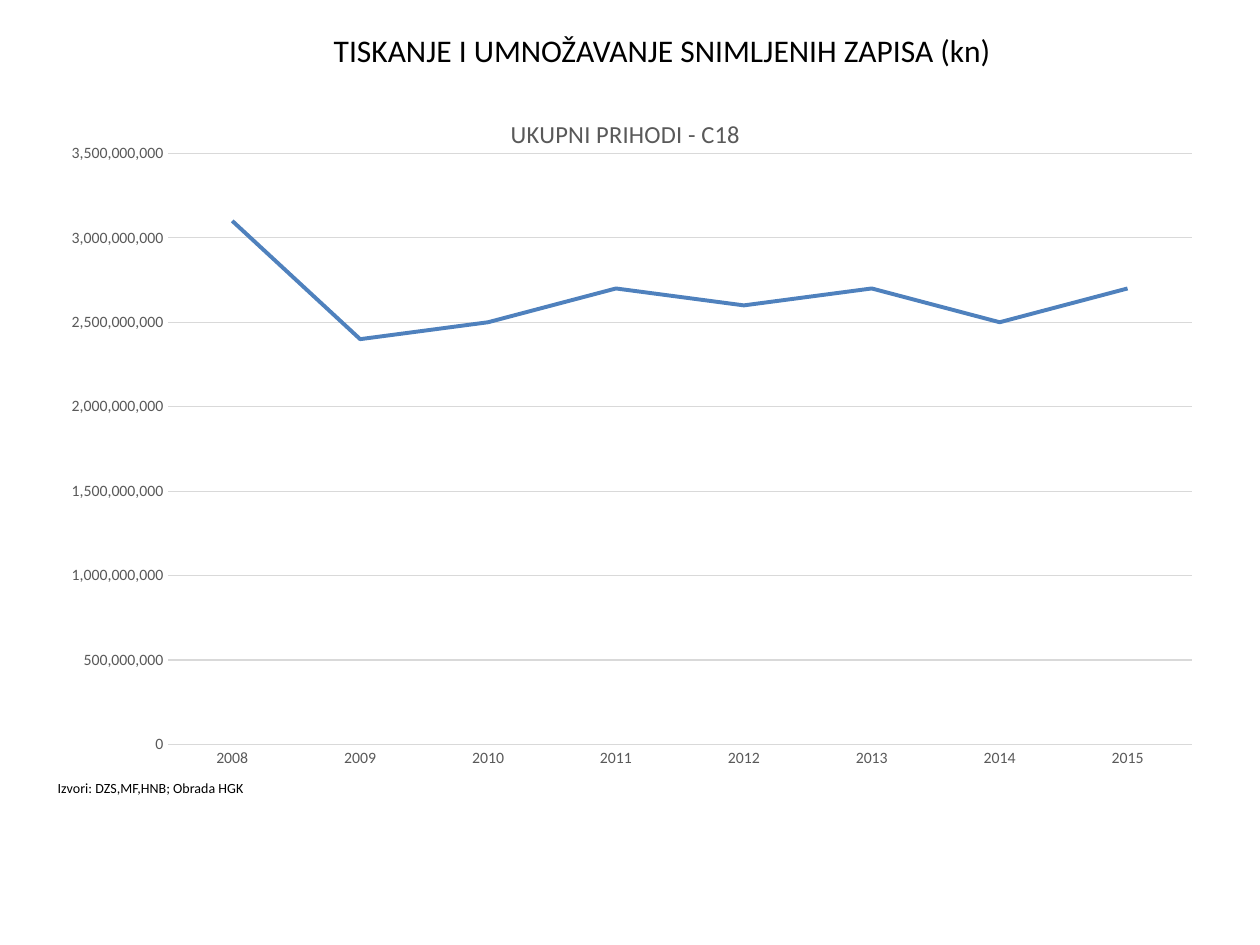
from lxml import etree
from pptx import Presentation
from pptx import util as u
from pptx.chart.data import CategoryChartData
from pptx.dml.color import RGBColor
from pptx.enum import chart as kinds, text
from pptx.oxml.ns import qn

COLOURS = {"ink": "000000", "label": "595959", "grid": "D9D9D9", "income": "4F81BD"}
YEARS = [str(year) for year in range(2008, 2016)]
INCOME_BILLIONS = [3.1, 2.4, 2.5, 2.7, 2.6, 2.7, 2.5, 2.7]


def style_font(font, size, colour, name="Calibri"):
    font.name, font.size, font.bold = name, u.Pt(size), False
    font.color.rgb = RGBColor.from_string(COLOURS[colour])


def write(frame, words, size, colour="ink", align=text.PP_ALIGN.LEFT):
    para = frame.paragraphs[0]
    para.alignment = align
    span = para.add_run()
    span.text = words
    style_font(span.font, size, colour)


class Page:
    """Holds the font style and current slide, and adds elements measured in points."""

    def __init__(self, deck):
        self.page = deck.slides.add_slide(deck.slide_layouts[6])

    def label(self, area, words, size, **style):
        frame = self.page.shapes.add_textbox(*map(u.Pt, area)).text_frame
        frame.word_wrap = True
        frame.auto_size = text.MSO_AUTO_SIZE.SHAPE_TO_FIT_TEXT
        write(frame, words, size, **style)

    def line_chart(self, area, title, years, values, plot):
        data = CategoryChartData(number_format="#,##0")
        data.categories = years
        data.add_series(title, values)
        chart = self.page.shapes.add_chart(
            kinds.XL_CHART_TYPE.LINE, *map(u.Pt, area), data).chart
        style_font(chart.font, 10, "ink")
        chart.has_legend = False
        chart.has_title = True
        write(chart.chart_title.text_frame, title, 14, "label", text.PP_ALIGN.CENTER)
        chart.chart_title.include_in_layout = False
        chart.plots[0].vary_by_categories = False
        series = chart.plots[0].series[0]
        series.smooth = False
        series.marker.style = kinds.XL_MARKER_STYLE.NONE
        self.stroke(series.format.line, "income", 2.25)
        self.axes(chart)
        self.place_plot(chart, plot)

    def axes(self, chart):
        for axis in (chart.category_axis, chart.value_axis):
            axis.major_tick_mark = axis.minor_tick_mark = kinds.XL_TICK_MARK.NONE
            style_font(axis.tick_labels.font, 9, "label")
        self.stroke(chart.category_axis.format.line, "grid", 0.75)
        values = chart.value_axis
        values.minimum_scale, values.maximum_scale = 0, 3_500_000_000
        values.major_unit = 500_000_000
        values.tick_labels.number_format = "#,##0"
        values.tick_labels.number_format_is_linked = False
        values.format.line.fill.background()
        values.has_major_gridlines = True
        self.stroke(values.major_gridlines.format.line, "grid", 0.75)

    def stroke(self, line, colour, width):
        line.color.rgb = RGBColor.from_string(COLOURS[colour])
        line.width = u.Pt(width)

    def place_plot(self, chart, plot):
        area = chart.plots[0]._element.getparent()
        for old in area.findall(qn("c:layout")):
            area.remove(old)
        layout = etree.Element(qn("c:layout"))
        area.insert(0, layout)
        manual = etree.SubElement(layout, qn("c:manualLayout"))
        settings = [("layoutTarget", "inner"), ("xMode", "edge"), ("yMode", "edge"),
                    *zip("xywh", plot)]
        for tag, value in settings:
            etree.SubElement(manual, qn(f"c:{tag}")).set("val", str(value))


def main():
    deck = Presentation()
    deck.slide_width, deck.slide_height = u.Pt(720), u.Pt(540)
    page = Page(deck)
    page.label((25.9, 442, 441, 17), "Izvori: DZS,MF,HNB; Obrada HGK", 8)
    page.label((103, 14, 551, 29), "TISKANJE I UMNOŽAVANJE SNIMLJENIH ZAPISA (kn)", 18,
               align=text.PP_ALIGN.CENTER)
    page.line_chart((25.9, 52.6, 663, 398), "UKUPNI PRIHODI - C18", YEARS,
                    [round(value * 1e9) for value in INCOME_BILLIONS],
                    plot=(0.106, 0.088, 0.882, 0.849))
    deck.save("out.pptx")


if __name__ == "__main__":
    main()
